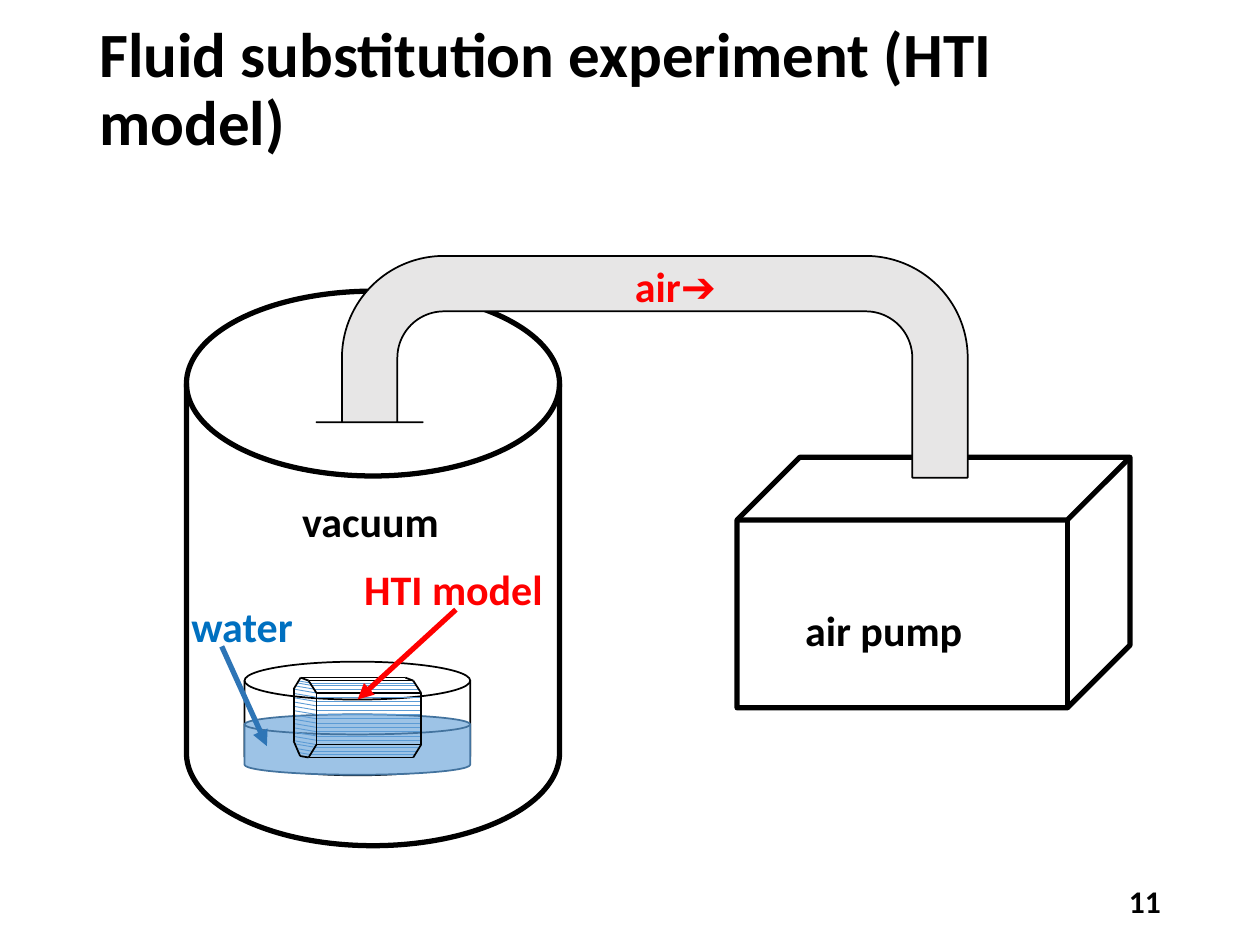
from itertools import pairwise

from lxml.etree import SubElement
from pptx import Presentation
from pptx.dml.color import RGBColor
from pptx.enum.shapes import MSO_CONNECTOR, MSO_SHAPE
from pptx.enum.text import MSO_ANCHOR, MSO_AUTO_SIZE, PP_ALIGN
from pptx.oxml.ns import qn
from pptx.util import Cm, Pt

BLACK = RGBColor(0x00, 0x00, 0x00)
WHITE = RGBColor(0xFF, 0xFF, 0xFF)
RED = RGBColor(0xFF, 0x00, 0x00)
GREY = RGBColor(0xE7, 0xE6, 0xE6)
WATER_FILL = RGBColor(0x9D, 0xC3, 0xE6)
WATER_EDGE = RGBColor(0x43, 0x73, 0x9E)
WATER_TEXT = RGBColor(0x00, 0x70, 0xC0)
WATER_ARROW = RGBColor(0x2E, 0x75, 0xB6)
LAYER_BLUE = RGBColor(0x5B, 0x9B, 0xD5)

MODEL_LENGTH = 2.11
MODEL_END = [
    (6.06, 13.66), (6.22, 13.72), (6.38, 13.97), (6.38, 15.01),
    (6.22, 15.27), (6.05, 15.24), (5.92, 14.94), (5.92, 13.89),
]
LAYER_SLOPE = 0.17
FACE_LAYERS = [(13.97 + i * 1.04 / 12, 6.38, 5.92) for i in range(13)]
BEVEL_LAYERS = [
    (13.77, 6.27, 6.02), (13.82, 6.3, 5.99), (13.89, 6.32, 5.97),
    (15.06, 6.32, 5.94), (15.14, 6.27, 5.99), (15.21, 6.25, 5.99),
]


class SlideBuilder:
    font = {"name": "Calibri", "bold": True}

    def __init__(self, prs):
        self.s = prs.slides.add_slide(prs.slide_layouts[5])

    def add_text(self, tf, text, size, color, **paragraph_format):
        p = tf.paragraphs[0]
        for name, value in paragraph_format.items():
            setattr(p, name, value)
        r = p.add_run()
        r.text = text
        for name, value in {**self.font, "size": Pt(size)}.items():
            setattr(r.font, name, value)
        r.font.color.rgb = color

    def frame(self, tf, **frame_format):
        for name, value in {"word_wrap": True, **frame_format}.items():
            setattr(tf, name, value)

    def title(self, text, box):
        sp = self.s.shapes.title
        for name, value in zip(("left", "top", "width", "height"), box):
            setattr(sp, name, Cm(value))
        self.frame(sp.text_frame, vertical_anchor=MSO_ANCHOR.MIDDLE,
                   auto_size=MSO_AUTO_SIZE.NONE)
        self.add_text(sp.text_frame, text, 36, BLACK,
                      alignment=PP_ALIGN.LEFT, line_spacing=0.9)

    def number(self, text, box):
        tf = self.s.shapes.add_textbox(*map(Cm, box)).text_frame
        self.frame(tf, vertical_anchor=MSO_ANCHOR.MIDDLE)
        self.add_text(tf, text, 18, BLACK, alignment=PP_ALIGN.RIGHT)

    def label(self, text, left, top, width, color=BLACK):
        box = map(Cm, (left, top, width, 1.27))
        tf = self.s.shapes.add_textbox(*box).text_frame
        self.frame(tf, auto_size=MSO_AUTO_SIZE.SHAPE_TO_FIT_TEXT)
        self.add_text(tf, text, 24, color)

    def shape(self, kind, box, width, fill=None, line=BLACK):
        sp = self.s.shapes.add_shape(kind, *map(Cm, box))
        sp.shadow.inherit = False
        if fill is None:
            sp.fill.background()
        else:
            sp.fill.solid()
            sp.fill.fore_color.rgb = fill
        sp.line.color.rgb = line
        sp.line.width = Pt(width)
        return sp

    def pipe(self, box, adjustments):
        sp = self.shape(MSO_SHAPE.U_TURN_ARROW, box, 1, GREY)
        for i, value in enumerate(adjustments):
            sp.adjustments[i] = value
        sp._element.spPr.get_or_add_xfrm().set("flipH", "1")

    def line(self, start, end, color, width, shapes=None):
        shapes = shapes or self.s.shapes
        cx = shapes.add_connector(MSO_CONNECTOR.STRAIGHT, *map(Cm, (*start, *end)))
        cx.line.color.rgb = color
        cx.line.width = Pt(width)
        SubElement(cx._element.spPr, qn("a:effectLst"))
        return cx

    def arrow(self, start, end, color):
        cx = self.line(start, end, color, 3)
        SubElement(cx._element.spPr.get_or_add_ln(), qn("a:tailEnd"), type="triangle")

    def layered_model(self):
        group = self.s.shapes.add_group_shape()
        for y, front, back in FACE_LAYERS + BEVEL_LAYERS:
            back_y = y - LAYER_SLOPE * (front - back)
            for end in ((front + MODEL_LENGTH, y), (back, back_y)):
                self.line((front, y), end, LAYER_BLUE, 0.5, group.shapes)
        far_end = [(x + MODEL_LENGTH, y) for x, y in MODEL_END[:5]]
        edges = [*pairwise(MODEL_END + MODEL_END[:1]), *pairwise(far_end),
                 *zip(MODEL_END, far_end)]
        for start, end in edges:
            self.line(start, end, BLACK, 1, group.shapes)


def main():
    prs = Presentation()
    prs.slide_width, prs.slide_height = Cm(25.4), Cm(19.05)
    b = SlideBuilder(prs)
    disk = MSO_SHAPE.FLOWCHART_MAGNETIC_DISK

    b.title("Fluid substitution experiment (HTI model)", (1.75, 0, 21.9, 3.68))
    b.number("11", (17.93, 17.65, 5.72, 1.02))

    b.shape(disk, (3.76, 5.87, 7.52, 11.18), 3)
    b.shape(MSO_SHAPE.CUBE, (14.86, 9.22, 7.92, 5.05), 3)
    b.shape(disk, (4.93, 13.34, 4.55, 2.29), 1, WHITE)
    b.shape(disk, (4.93, 14.4, 4.55, 1.22), 1, WATER_FILL, WATER_EDGE)
    b.layered_model()

    b.label("air pump", 15.98, 12.07, 3.91)
    b.arrow((4.47, 13.03), (5.38, 15.04), WATER_ARROW)
    b.label("water", 3.61, 11.99, 3.89, WATER_TEXT)
    b.arrow((9.19, 12.29), (7.21, 14.1), RED)
    b.label("HTI model", 7.09, 11.23, 4.19, RED)
    b.label("vacuum", 5.84, 9.86, 3.71)

    b.pipe((6.38, 5.16, 13.13, 4.47), (0.25, 0.24, 0, 0.46, 0.75))
    b.label("air➔", 12.55, 5.13, 3.43, RED)

    prs.save("out.pptx")


if __name__ == "__main__":
    main()
